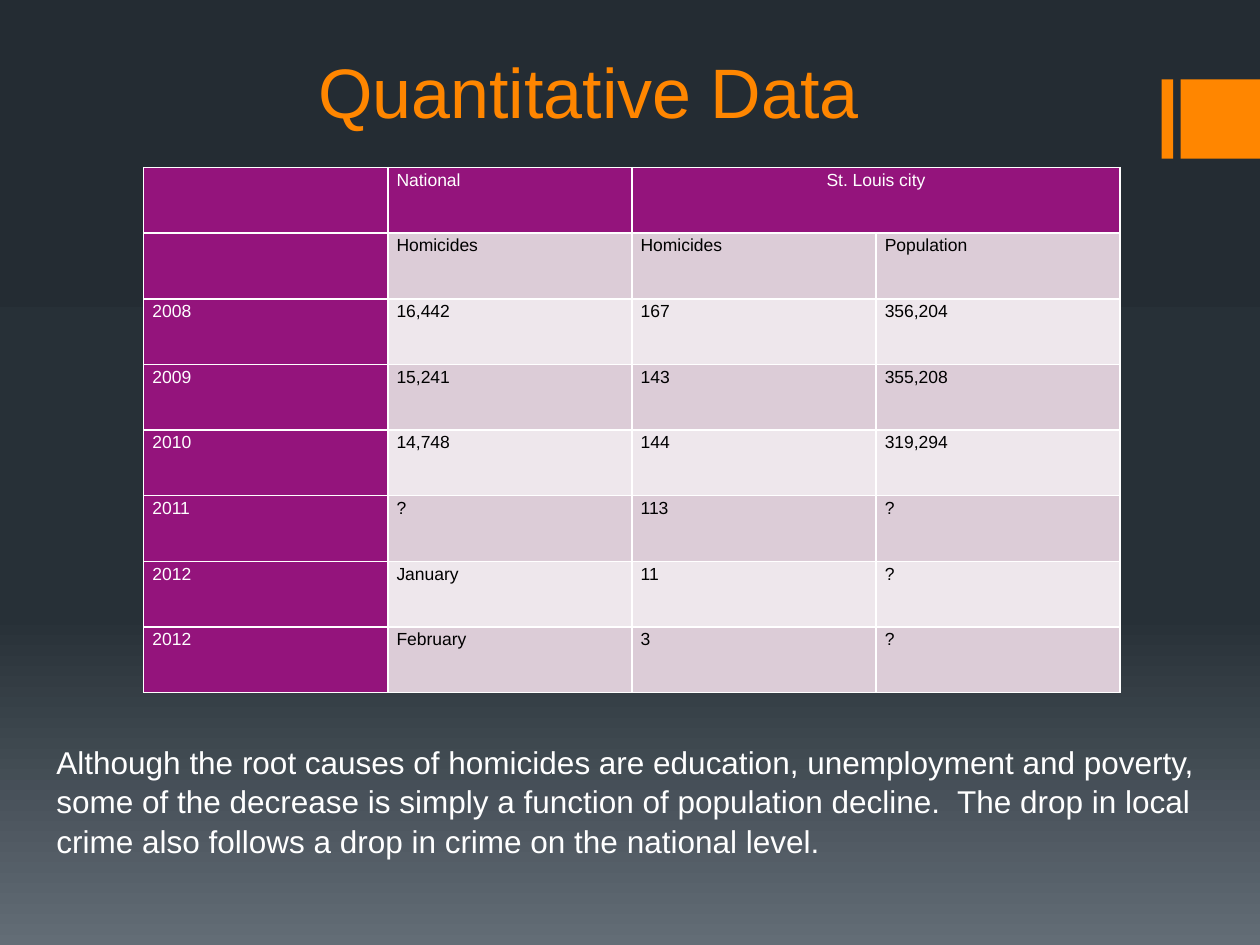
from copy import deepcopy

from lxml.etree import SubElement
from pptx import Presentation
from pptx.dml.color import RGBColor
from pptx.enum.shapes import MSO_SHAPE as SHAPE
from pptx.enum.text import MSO_ANCHOR as ANCHOR, MSO_AUTO_SIZE as AUTO, PP_ALIGN as ALIGN
from pptx.oxml.ns import qn
from pptx.util import Inches, Pt

ORANGE, WHITE, BLACK = "FF8600", "FFFFFF", "000000"
PURPLE, BAND_DARK, BAND_LIGHT = "94147C", "DCCCD7", "EEE7EC"
BACKGROUND = [(0, "242C33"), (0.65, "273037"), (1, "636D76")]
ROWS = [
    ("", "National", "St. Louis city", ""),
    ("", "Homicides", "Homicides", "Population"),
    ("2008", "16,442", "167", "356,204"),
    ("2009", "15,241", "143", "355,208"),
    ("2010", "14,748", "144", "319,294"),
    ("2011", "?", "113", "?"),
    ("2012", "January", "11", "?"),
    ("2012", "February", "3", "?"),
]
COMMENT = (
    "Although the root causes of homicides are education, unemployment and poverty, "
    "some of the decrease is simply a function of population decline.  The drop in "
    "local crime also follows a drop in crime on the national level."
)


def rgb(value):
    return RGBColor.from_string(value)


def write(tf, text, size, color, align=ALIGN.LEFT, spacing=1.0):
    p = tf.paragraphs[0]
    p.text = text
    p.alignment, p.line_spacing = align, spacing
    p.font.name, p.font.size = "Arial", Pt(size)
    p.font.color.rgb = rgb(color)


def paint_background(s):
    fill = s.background.fill
    fill.gradient()
    fill.gradient_angle = 270
    stops = s.element.find(".//" + qn("a:gsLst"))
    stops.append(deepcopy(stops[-1]))
    for stop, (position, color) in zip(fill.gradient_stops, BACKGROUND):
        stop.position = position
        stop.color.rgb = rgb(color)


def add_marker(s, x, y, w, h):
    """Thin bar and block that run to the right edge of the box."""
    for left, width in ((x, 0.09), (x + w - h, h)):
        sp = s.shapes.add_shape(
            SHAPE.RECTANGLE, Inches(left), Inches(y), Inches(width), Inches(h))
        sp.shadow.inherit = False
        sp.fill.solid()
        sp.fill.fore_color.rgb = rgb(ORANGE)
        sp.line.fill.background()


def add_title(s, x, y, w, h):
    sp = s.shapes.title
    sp.left, sp.top, sp.width, sp.height = map(Inches, (x, y, w, h))
    sp.text_frame.vertical_anchor = ANCHOR.BOTTOM
    write(sp.text_frame, "Quantitative Data", 40, ORANGE, ALIGN.CENTER)


def add_comment(s, x, y, w, h):
    tf = s.shapes.add_textbox(*map(Inches, (x, y, w, h))).text_frame
    tf.word_wrap = True
    tf.auto_size = AUTO.SHAPE_TO_FIT_TEXT
    write(tf, COMMENT, 18, WHITE, spacing=1.05)


def set_borders(cell, color, width):
    tcPr = cell._tc.get_or_add_tcPr()
    for i, side in enumerate(("a:lnL", "a:lnR", "a:lnT", "a:lnB")):
        ln = SubElement(tcPr, qn(side), w=str(Pt(width)))
        SubElement(SubElement(ln, qn("a:solidFill")), qn("a:srgbClr"), val=color)
        tcPr.insert(i, ln)


def format_cell(cell, text, row, col):
    heading = row == 0 or col == 0
    cell.fill.solid()
    cell.fill.fore_color.rgb = rgb(
        PURPLE if heading else BAND_DARK if row % 2 else BAND_LIGHT)
    set_borders(cell, WHITE, 1)
    cell.margin_left = cell.margin_right = Inches(0.07)
    cell.margin_top = cell.margin_bottom = 0
    if text:
        align = ALIGN.CENTER if cell.is_merge_origin else ALIGN.JUSTIFY
        write(cell.text_frame, text, 10, WHITE if heading else BLACK, align, 1.15)


def add_homicide_table(s, x, y, w, h):
    table = s.shapes.add_table(
        len(ROWS), len(ROWS[0]), *map(Inches, (x, y, w, h))).table
    table.first_col = True
    table.cell(0, 2).merge(table.cell(0, 3))
    for row, texts in enumerate(ROWS):
        for col, text in enumerate(texts):
            format_cell(table.cell(row, col), text, row, col)


def main():
    prs = Presentation()
    prs.slide_width, prs.slide_height = Inches(10), Inches(7.5)
    s = prs.slides.add_slide(prs.slide_layouts[5])
    paint_background(s)
    add_marker(s, 9.22, 0.63, 0.78, 0.63)
    add_title(s, 0.67, 0.17, 8, 0.93)
    add_comment(s, 0.35, 5.83, 9.33, 1.31)
    add_homicide_table(s, 1.14, 1.33, 7.75, 4.17)
    prs.save("out.pptx")


if __name__ == "__main__":
    main()
